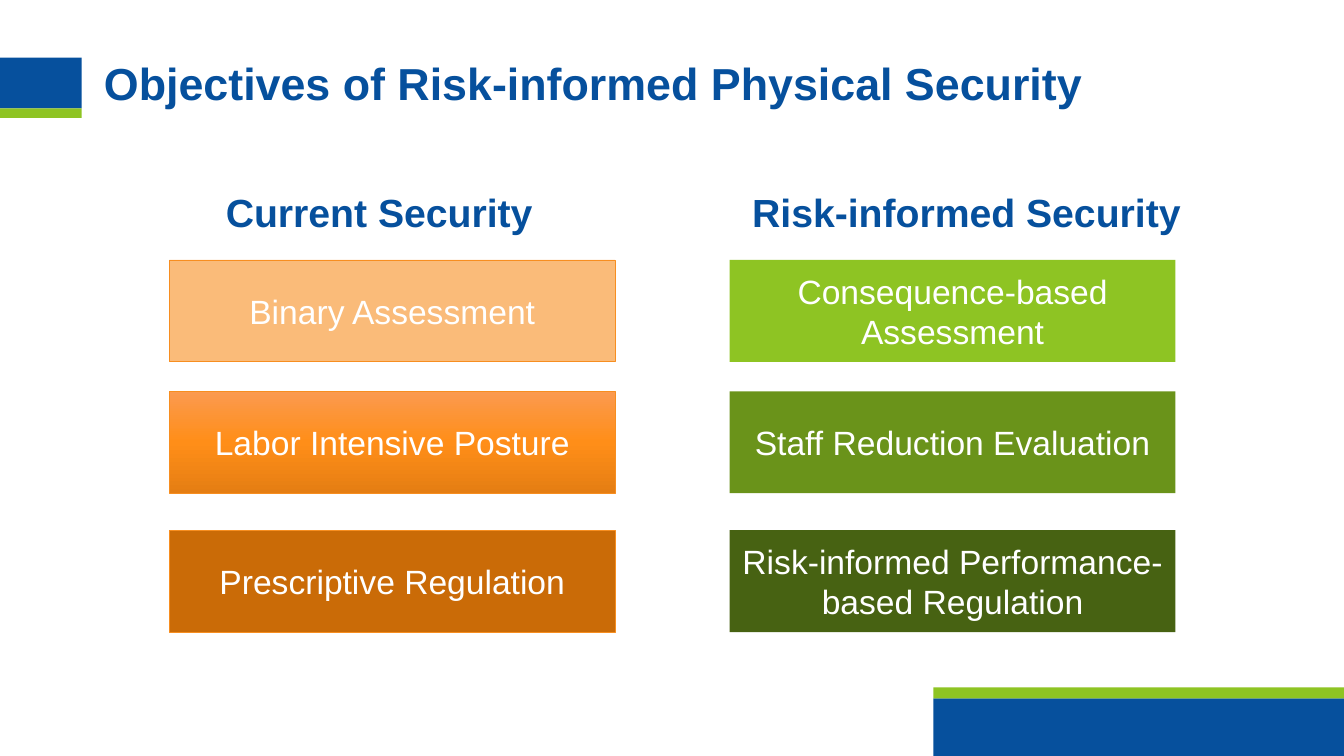
from copy import deepcopy
from dataclasses import dataclass

from pptx import Presentation
from pptx.dml.color import RGBColor
from pptx.enum import shapes, text
from pptx.util import Cm, Pt


@dataclass(frozen=True)
class Theme:
    font: str = "Arial"
    blue: str = "06509D"
    green: str = "8EC423"
    white: str = "FFFFFF"
    edge: str = "F78E20"
    warm: tuple = ("FABB79", ("FB9A50", "FF8E18", "E57E13"), "CA6B07")
    cool: tuple = ("8EC423", "6A931A", "476212")
    title: int = 32
    head: int = 28
    body: int = 24


THEME = Theme()
MID = text.MSO_ANCHOR.MIDDLE
CENTER = text.PP_ALIGN.CENTER


def rgb(code):
    return RGBColor.from_string(code)


def write(shape, words, size, color, bold=False, align=None, anchor=MID, space=None):
    frame = shape.text_frame
    frame.word_wrap = True
    frame.vertical_anchor = anchor
    para = frame.paragraphs[0]
    para.alignment = align
    para.line_spacing = space
    run = para.add_run()
    run.text = words
    font = run.font
    font.name, font.size, font.bold = THEME.font, Pt(size), bold
    font.color.rgb = rgb(color)


def label(slide, words, left, top, width, height, **style):
    box = slide.shapes.add_textbox(Cm(left), Cm(top), Cm(width), Cm(height))
    frame = box.text_frame
    frame.margin_left = frame.margin_top = 0
    write(box, words, color=THEME.blue, bold=True, space=0.9, **style)


def blend(fill, colors):
    """Fill from top to bottom with three evenly spaced colours."""
    fill.gradient()
    fill.gradient_angle = 270
    first = fill.gradient_stops[0]._gs
    first.addnext(deepcopy(first))
    for i, (stop, color) in enumerate(zip(fill.gradient_stops, colors)):
        stop.position = i / 2
        stop.color.rgb = rgb(color)


def block(slide, left, top, width, height, paint, edge=None):
    shape = slide.shapes.add_shape(
        shapes.MSO_SHAPE.RECTANGLE, Cm(left), Cm(top), Cm(width), Cm(height))
    shape.shadow.inherit = False
    if isinstance(paint, tuple):
        blend(shape.fill, paint)
    else:
        shape.fill.solid()
        shape.fill.fore_color.rgb = rgb(paint)
    if edge:
        shape.line.color.rgb = rgb(edge)
        shape.line.width = Pt(0.5)
    else:
        shape.line.fill.background()
    return shape


def column(slide, head, start, left, items, paints, edge=None):
    label(slide, head, start, 4.42, 14.12, 2.13, size=THEME.head, align=CENTER)
    for top, words, paint in zip((6.55, 9.86, 13.36), items, paints):
        card = block(slide, left, top, 11.23, 2.57, paint, edge)
        write(card, words, THEME.body, THEME.white, align=CENTER)


def main():
    deck = Presentation()
    deck.slide_width, deck.slide_height = Cm(33.87), Cm(19.05)
    slide = deck.slides.add_slide(deck.slide_layouts[6])

    block(slide, 23.52, 17.6, 10.35, 1.45, THEME.blue)
    block(slide, 23.52, 17.32, 10.35, 0.28, THEME.green)
    block(slide, 0, 1.45, 2.06, 1.28, THEME.blue)
    block(slide, 0, 2.73, 2.06, 0.24, THEME.green)

    label(slide, "Objectives of Risk-informed Physical Security",
          2.62, 1.55, 28.93, 2.79, size=THEME.title, anchor=text.MSO_ANCHOR.TOP)
    column(slide, "Current Security", 2.62, 4.27,
           ("Binary Assessment", "Labor Intensive Posture", "Prescriptive Regulation"),
           THEME.warm, THEME.edge)
    column(slide, "Risk-informed Security", 17.42, 18.39,
           ("Consequence-based Assessment", "Staff Reduction Evaluation",
            "Risk-informed Performance-based Regulation"),
           THEME.cool)
    deck.save("out.pptx")


if __name__ == "__main__":
    main()
